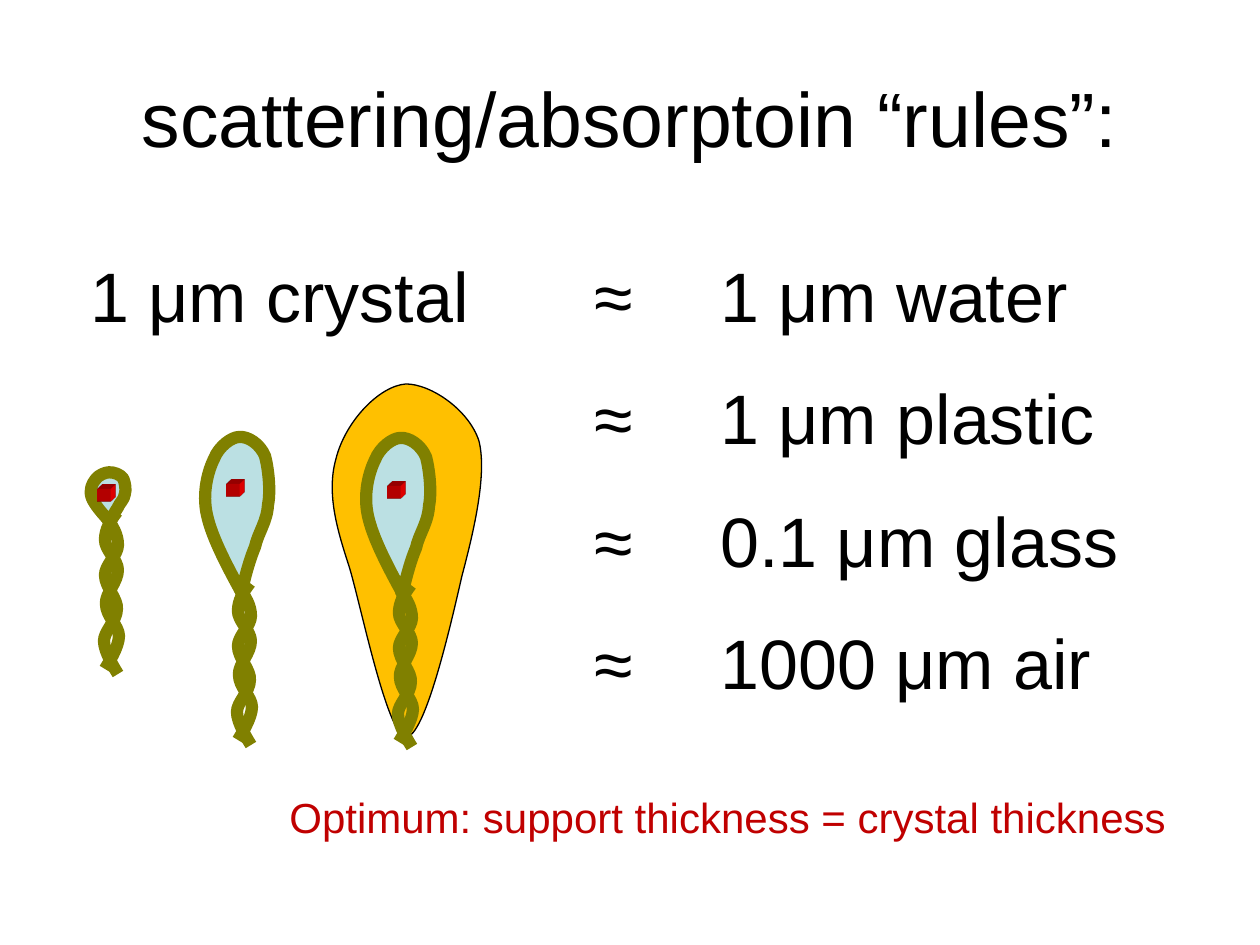
from lxml import etree
from pptx import Presentation
from pptx.dml.color import RGBColor
from pptx.enum.shapes import MSO_SHAPE
from pptx.enum.text import MSO_ANCHOR, PP_ALIGN
from pptx.oxml import parse_xml
from pptx.oxml.ns import nsdecls, qn
from pptx.util import Pt

RECTANGLE = MSO_SHAPE.RECTANGLE
MIDDLE = MSO_ANCHOR.MIDDLE
CENTER = PP_ALIGN.CENTER

PX = 914400 / 126
FONT = "Arial"
BLACK, RED, OLIVE = "000000", "C00000", "808000"
WATER, AMBER, CRYSTAL = "BBE0E3", "FFC000", "FF0000"

# Curves: a start point, then rows of two control points and an end point
LOOP_SIZE = (70, 168)
LOOP = [(42, 161),
        (26, 132), (10, 102), (5, 79),
        (0, 57), (6, 35), (12, 23),
        (17, 10), (30, 1), (37, 1),
        (46, 0), (58, 8), (63, 20),
        (66, 31), (69, 54), (66, 69),
        (65, 86), (56, 97), (53, 111),
        (47, 125), (42, 145), (40, 155),
        (39, 164), (40, 166), (40, 168)]
STRAND_WIDTH, STRAND_RISE = 15, 5
STRAND = [(2, 0),
          (9, 9), (14, 18), (14, 28),
          (14, 38), (1, 48), (1, 58),
          (1, 70), (14, 82), (13, 92),
          (13, 104), (0, 114), (0, 124),
          (0, 135), (11, 152), (14, 157)]
DROP = [(130, 192),
        (143, 143), (155, 89), (147, 57),
        (137, 26), (99, 0), (74, 0),
        (47, 2), (13, 38), (4, 75),
        (-6, 110), (6, 148), (17, 182),
        (28, 217), (55, 352), (74, 353),
        (93, 354), (119, 240), (130, 192)]


def px(length):
    return round(length * PX)


def color(hex_string):
    return RGBColor.from_string(hex_string)


def set_font(paragraph, size, hex_string):
    font = paragraph.font
    font.name, font.size = FONT, Pt(size)
    font.color.rgb = color(hex_string)


def add_curve(shapes, points, left, top, line, width, fill=None, close=False):
    spots = [(px(left + x), px(top + y)) for x, y in points]
    builder = shapes.build_freeform(*spots[0])
    builder.add_line_segments(spots[1:], close=close)
    curve = builder.convert_to_shape()
    # Join every three straight segments into one Bezier segment
    segments = curve._element.xpath(".//a:lnTo")
    for first in range(0, len(segments), 3):
        bezier = etree.Element(qn("a:cubicBezTo"))
        segments[first].addprevious(bezier)
        for segment in segments[first:first + 3]:
            bezier.append(segment[0])
            segment.getparent().remove(segment)
    curve.shadow.inherit = False
    curve.line.color.rgb = color(line)
    curve.line.width = Pt(width)
    if fill:
        curve.fill.solid()
        curve.fill.fore_color.rgb = color(fill)
    else:
        curve.fill.background()


def add_crystal(shapes, left, top, side=13):
    crystal = shapes.add_shape(RECTANGLE, px(left), px(top), px(side), px(side))
    crystal.shadow.inherit = False
    crystal.fill.solid()
    crystal.fill.fore_color.rgb = color(CRYSTAL)
    crystal.line.fill.background()
    # Extrude the square into a cube
    properties = crystal._element.spPr
    properties.append(parse_xml(
        f'<a:scene3d {nsdecls("a")}><a:camera prst="legacyObliqueTopRight"/>'
        '<a:lightRig rig="legacyFlat3" dir="b"/></a:scene3d>'))
    properties.append(parse_xml(
        f'<a:sp3d {nsdecls("a")} extrusionH="100000" prstMaterial="legacyMatte">'
        f'<a:extrusionClr><a:srgbClr val="{CRYSTAL}"/></a:extrusionClr></a:sp3d>'))


def add_mount(slide, loop_box, crystal_at, twist_at, drop_at=None):
    """Crystal in a twisted fibre loop, with an optional drop around it."""
    shapes = slide.shapes.add_group_shape().shapes
    if drop_at:
        add_curve(shapes, DROP, *drop_at, BLACK, 0.75, AMBER, close=True)
    left, top, width, height = loop_box
    loop = [(x * width / LOOP_SIZE[0], y * height / LOOP_SIZE[1]) for x, y in LOOP]
    add_curve(shapes, loop, left, top, OLIVE, 7, WATER)
    add_crystal(shapes, *crystal_at)
    mirrored = [(STRAND_WIDTH - x, y - STRAND_RISE) for x, y in STRAND]
    for strand in (STRAND, mirrored):
        add_curve(shapes, strand, *twist_at, OLIVE, 7)


def add_title(slide, left, top, width, height):
    title = slide.shapes.title
    title.left, title.top = px(left), px(top)
    title.width, title.height = px(width), px(height)
    frame = title.text_frame
    frame.text = "scattering/absorptoin “rules”:"
    frame.vertical_anchor = MIDDLE
    frame.paragraphs[0].alignment = CENTER
    set_font(frame.paragraphs[0], 44, BLACK)


def add_rules(slide, left, top, width, height):
    frame = slide.shapes.add_textbox(px(left), px(top), px(width), px(height)).text_frame
    frame.word_wrap = True
    rules = [("1 μm crystal", "1 μm water"), ("", "1 μm plastic"),
             ("", "0.1 μm glass"), ("", "1000 μm air")]
    for row, (sample, equivalent) in enumerate(rules):
        paragraph = frame.add_paragraph() if row else frame.paragraphs[0]
        paragraph.text = f"{sample}\t≈\t{equivalent}"
        if row:
            paragraph.space_before = Pt(22)
        # Columns for the sign and the equivalent thickness
        tabs = etree.SubElement(paragraph._p.get_or_add_pPr(), qn("a:tabLst"))
        for stop in (504, 630):
            etree.SubElement(tabs, qn("a:tab"), pos=str(px(stop)), algn="l")
        set_font(paragraph, 40, BLACK)


def add_conclusion(slide, left, top, width, height):
    frame = slide.shapes.add_textbox(px(left), px(top), px(width), px(height)).text_frame
    frame.word_wrap = False
    frame.text = "Optimum: support thickness = crystal thickness"
    set_font(frame.paragraphs[0], 24, RED)


def main():
    deck = Presentation()
    deck.slide_width, deck.slide_height = px(1260), px(945)
    slide = deck.slides.add_slide(deck.slide_layouts[5])
    add_title(slide, 63, 38, 1134, 158)
    add_rules(slide, 78, 246, 1086, 475)
    # Large loop, large loop in a drop, small loop
    add_mount(slide, (202, 436, *LOOP_SIZE), (227, 484), (237, 588))
    add_mount(slide, (363, 437, *LOOP_SIZE), (388, 486), (398, 590), (332, 384))
    add_mount(slide, (89, 472, 38, 54), (98, 489), (104, 517))
    add_conclusion(slide, 277, 785, 911, 63)
    deck.save("out.pptx")


if __name__ == "__main__":
    main()
